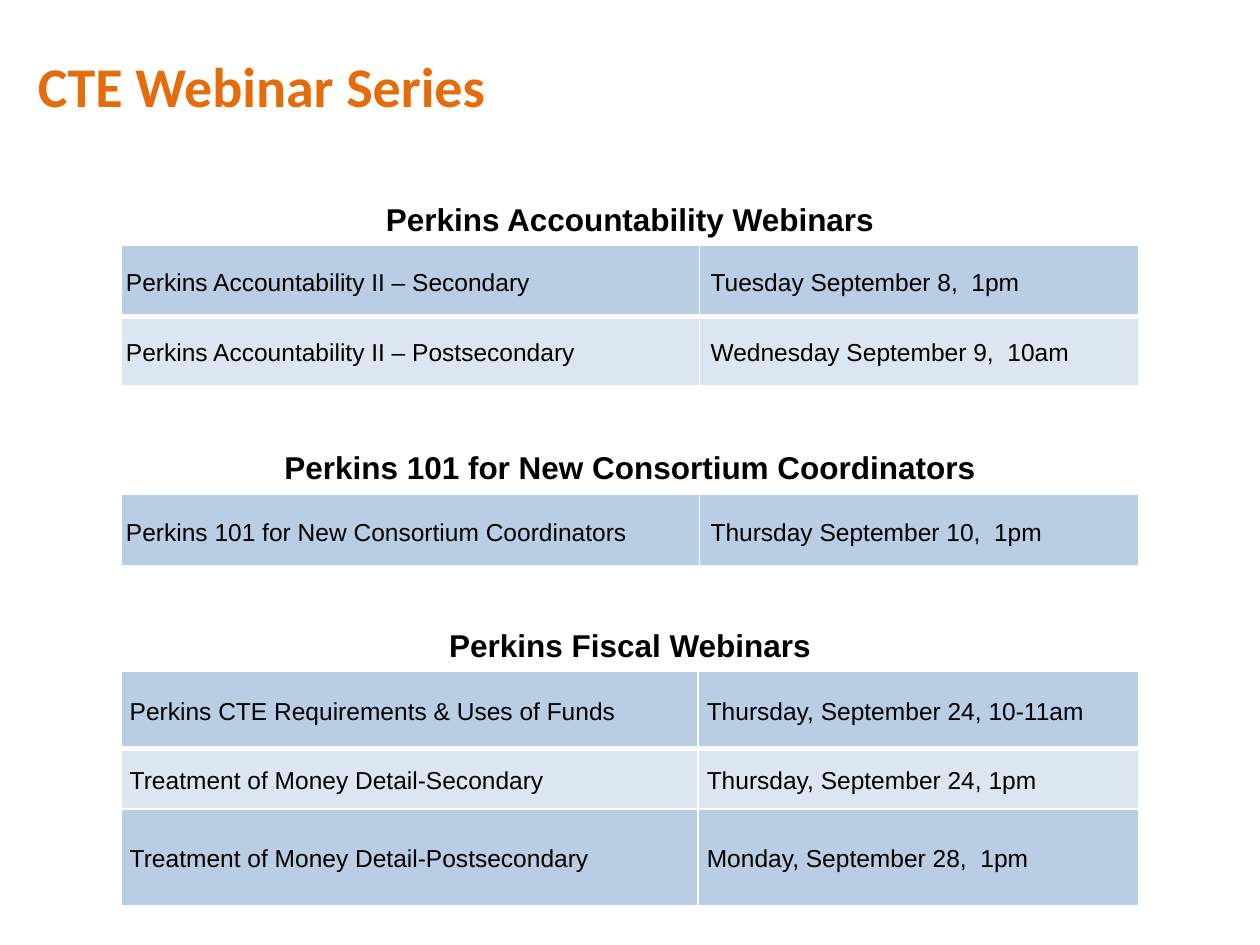
"""Build the webinar schedule slide: a title and three headed tables."""
from lxml import etree
from pptx import Presentation
from pptx.dml.color import RGBColor
from pptx.enum.text import MSO_ANCHOR, MSO_AUTO_SIZE, PP_ALIGN
from pptx.oxml.ns import qn
from pptx.util import Inches, Pt

TOP, MIDDLE = MSO_ANCHOR.TOP, MSO_ANCHOR.MIDDLE
LEFT, CENTER = PP_ALIGN.LEFT, PP_ALIGN.CENTER
NO_FIT = MSO_AUTO_SIZE.NONE
WIDE, HIGH = 10, 7.5
SPAN = 8.08
HEAD = 0.41
BANDS = ("B9CDE5", "DCE6F2")

TITLE = "CTE Webinar Series"
GROUPS = [
    {"head": "Perkins Accountability Webinars", "top": 1.95,
     "split": 4.59, "pads": (0.04, 0.09), "rows": [
         (0.56, "Perkins Accountability II – Secondary",
          "Tuesday September 8,  1pm"),
         (0.55, "Perkins Accountability II – Postsecondary",
          "Wednesday September 9,  10am")]},
    {"head": "Perkins 101 for New Consortium Coordinators", "top": 3.92,
     "split": 4.59, "pads": (0.04, 0.09), "rows": [
         (0.58, "Perkins 101 for New Consortium Coordinators",
          "Thursday September 10,  1pm")]},
    {"head": "Perkins Fiscal Webinars", "top": 5.33,
     "split": 4.58, "pads": (0.07, 0.07), "rows": [
         (0.61, "Perkins CTE Requirements & Uses of Funds",
          "Thursday, September 24, 10-11am"),
         (0.48, "Treatment of Money Detail-Secondary",
          "Thursday, September 24, 1pm"),
         (0.77, "Treatment of Money Detail-Postsecondary",
          "Monday, September 28,  1pm")]},
]


def color(code):
    return RGBColor.from_string(code)


def write(frame, text, size, face="Arial", shade="000000", bold=False,
          align=LEFT, lead=None):
    frame.text = text
    frame.word_wrap = True
    par = frame.paragraphs[0]
    par.alignment = align
    par.line_spacing = lead
    font = par.runs[0].font
    font.size, font.name, font.bold = Pt(size), face, bold
    font.color.rgb = color(shade)


def edge(cell, base):
    props = cell._tc.get_or_add_tcPr()
    for side, width in (("L", 1), ("R", 1), ("T", 1), ("B", base)):
        line = etree.SubElement(props, qn(f"a:ln{side}"), w=str(Pt(width)))
        fill = etree.SubElement(line, qn("a:solidFill"))
        etree.SubElement(fill, qn("a:srgbClr"), val="FFFFFF")


def add_title(slide):
    title = slide.shapes.title
    title.left, title.top = Inches(0.2), Inches(0.42)
    title.width, title.height = Inches(5.71), Inches(0.83)
    frame = title.text_frame
    write(frame, TITLE, 32, "Calibri", "E46C0A", True, lead=Pt(34))
    frame.vertical_anchor, frame.auto_size = TOP, NO_FIT


def add_group(slide, group):
    left, top, rows = (WIDE - SPAN) / 2, group["top"], group["rows"]
    box = slide.shapes.add_textbox(
        Inches(left), Inches(top - HEAD), Inches(SPAN), Inches(0.4))
    write(box.text_frame, group["head"], 18, bold=True, align=CENTER)

    table = slide.shapes.add_table(
        len(rows), 2, Inches(left), Inches(top), Inches(SPAN),
        Inches(sum(row[0] for row in rows))).table
    table.first_row = table.horz_banding = False
    table.columns[0].width = Inches(group["split"])
    table.columns[1].width = Inches(SPAN - group["split"])
    for i, (tall, *texts) in enumerate(rows):
        table.rows[i].height = Inches(tall)
        for j, text in enumerate(texts):
            cell = table.cell(i, j)
            write(cell.text_frame, text, 14, lead=1.15)
            cell.vertical_anchor = MIDDLE
            cell.margin_left = Inches(group["pads"][j])
            cell.margin_right = Inches(group["pads"][0])
            cell.margin_top = cell.margin_bottom = 0
            edge(cell, 1 if i else 3)
            cell.fill.solid()
            cell.fill.fore_color.rgb = color(BANDS[i % 2])


def main():
    deck = Presentation()
    deck.slide_width, deck.slide_height = Inches(WIDE), Inches(HIGH)
    slide = deck.slides.add_slide(deck.slide_layouts[5])
    add_title(slide)
    for group in GROUPS:
        add_group(slide, group)
    deck.save("out.pptx")


if __name__ == "__main__":
    main()
